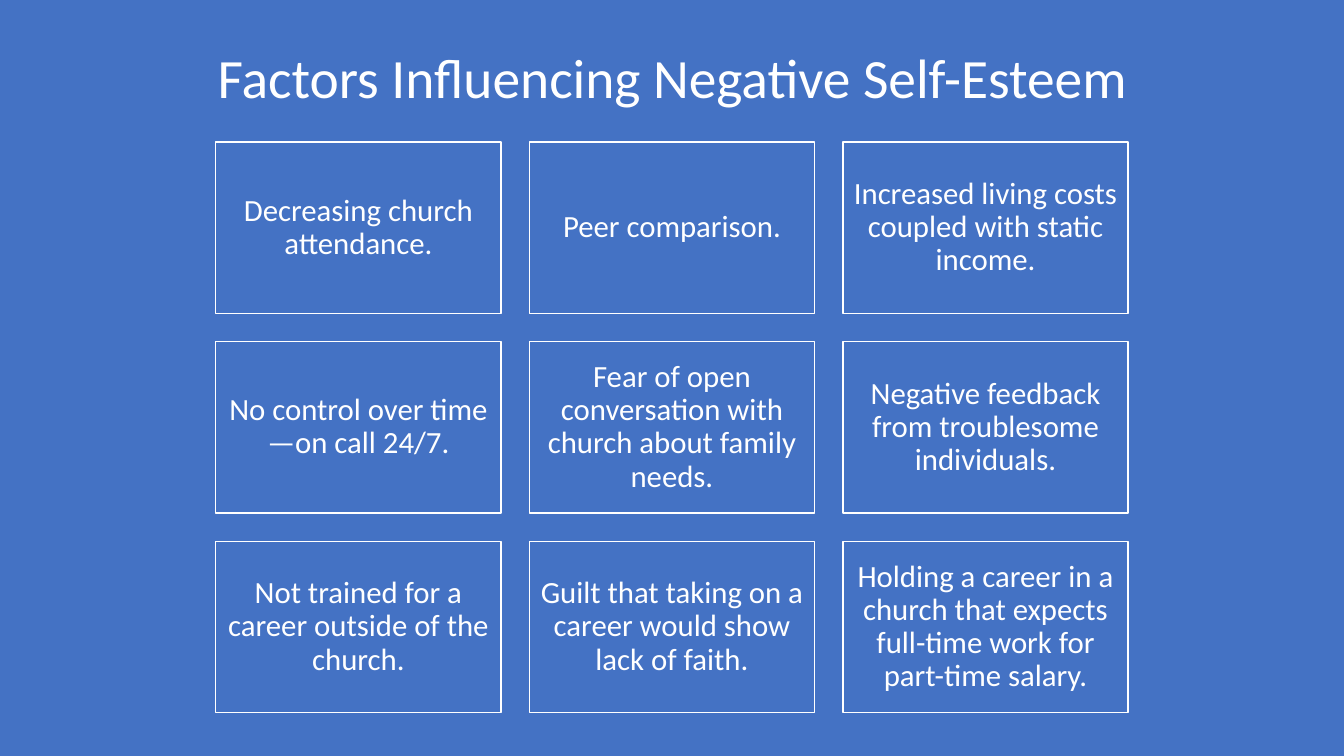
from dataclasses import dataclass

from pptx import Presentation
from pptx.dml.color import RGBColor
from pptx.enum.shapes import MSO_SHAPE
from pptx.enum.text import MSO_ANCHOR, PP_ALIGN
from pptx.util import Inches, Pt

RECTANGLE = MSO_SHAPE.RECTANGLE
MIDDLE = MSO_ANCHOR.MIDDLE
CENTER = PP_ALIGN.CENTER


@dataclass(frozen=True)
class Theme:
    blue: RGBColor = RGBColor(0x44, 0x72, 0xC4)
    white: RGBColor = RGBColor(0xFF, 0xFF, 0xFF)
    font: str = "Calibri"
    title_size: float = 39.6
    factor_size: float = 22
    line_width: float = 1
    line_spacing: float = 0.9


FACTORS = [
    "Decreasing church attendance.",
    "Peer comparison.",
    "Increased living costs coupled with static income.",
    "No control over time—on call 24/7.",
    "Fear of open conversation with church about family needs.",
    "Negative feedback from troublesome individuals.",
    "Not trained for a career outside of the church.",
    "Guilt that taking on a career would show lack of faith.",
    "Holding a career in a church that expects full-time work for part-time salary.",
]
COLUMNS = 3
GRID_LEFT, GRID_TOP = 2.14, 1.41
BOX_WIDTH, BOX_HEIGHT = 2.83, 1.7
GAP = 0.28


class FactorSlide:
    def __init__(self, page, theme):
        self.page = page
        self.theme = theme
        background = page.background.fill
        background.solid()
        background.fore_color.rgb = theme.blue

    def add_text(self, shape, text, size, inset):
        """Set centred white text with equal insets on all four sides."""
        frame = shape.text_frame
        frame.word_wrap = True
        frame.vertical_anchor = MIDDLE
        frame.margin_left = frame.margin_right = Inches(inset)
        frame.margin_top = frame.margin_bottom = Inches(inset)
        para = frame.paragraphs[0]
        para.alignment = CENTER
        para.line_spacing = self.theme.line_spacing
        span = para.add_run()
        span.text = text
        span.font.name = self.theme.font
        span.font.size = Pt(size)
        span.font.color.rgb = self.theme.white

    def title(self, text, left, top, width, height):
        box = self.page.shapes.add_textbox(
            Inches(left), Inches(top), Inches(width), Inches(height))
        self.add_text(box, text, self.theme.title_size, 0.05)

    def factor(self, text, left, top):
        box = self.page.shapes.add_shape(
            RECTANGLE, Inches(left), Inches(top),
            Inches(BOX_WIDTH), Inches(BOX_HEIGHT))
        box.shadow.inherit = False
        box.fill.solid()
        box.fill.fore_color.rgb = self.theme.blue
        box.line.color.rgb = self.theme.white
        box.line.width = Pt(self.theme.line_width)
        self.add_text(box, text, self.theme.factor_size, 0.09)


def main():
    deck = Presentation()
    deck.slide_width, deck.slide_height = Inches(13.33), Inches(7.5)
    slide = FactorSlide(deck.slides.add_slide(deck.slide_layouts[6]), Theme())

    slide.title("Factors Influencing Negative Self-Esteem", 0.92, 0.43, 11.5, 0.74)
    for index, text in enumerate(FACTORS):
        row, column = divmod(index, COLUMNS)
        slide.factor(text,
                     GRID_LEFT + column * (BOX_WIDTH + GAP),
                     GRID_TOP + row * (BOX_HEIGHT + GAP))

    deck.save("out.pptx")


if __name__ == "__main__":
    main()
